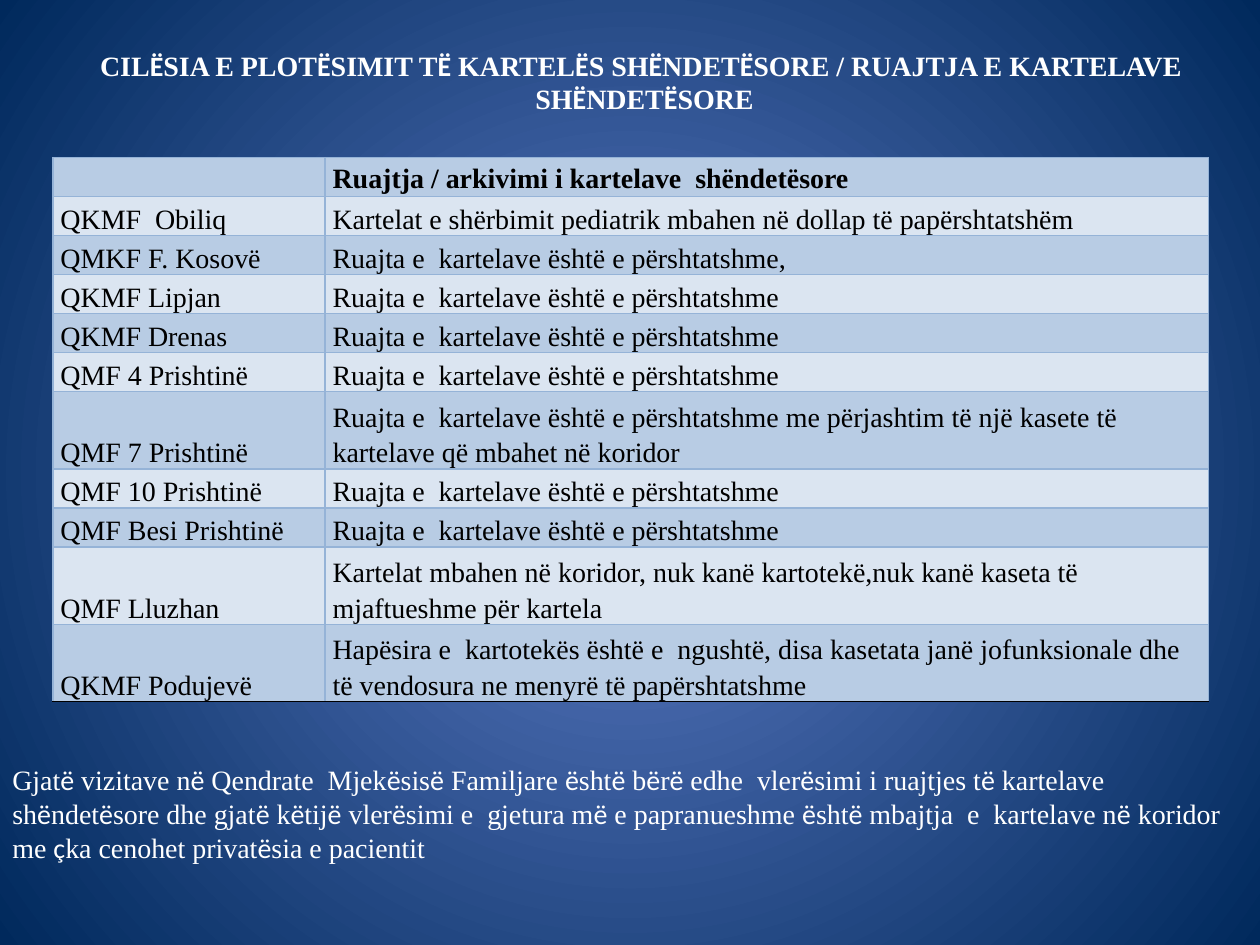
import itertools

import pptx
import pptx.dml.color
import pptx.enum.text
import pptx.oxml
import pptx.oxml.ns
import pptx.util

Inches = pptx.util.Inches
ANCHOR = pptx.enum.text.MSO_ANCHOR
ALIGN = pptx.enum.text.PP_ALIGN

TITLE = ("CILËSIA E PLOTËSIMIT TË KARTELËS SHËNDETËSORE / "
         "RUAJTJA E KARTELAVE  SHËNDETËSORE")
NOTE = ("Gjatë vizitave në Qendrate  Mjekësisë Familjare është bërë edhe  "
        "vlerësimi i ruajtjes të kartelave  shëndetësore dhe gjatë këtijë "
        "vlerësimi e  gjetura më e papranueshme është mbajtja  e  kartelave "
        "në koridor me çka cenohet privatësia e pacientit")
SUITABLE = "Ruajta e  kartelave është e përshtatshme"
ROWS = [
    ("", "Ruajtja / arkivimi i kartelave  shëndetësore"),
    ("QKMF  Obiliq", "Kartelat e shërbimit pediatrik mbahen në dollap të papërshtatshëm"),
    ("QMKF F. Kosovë", SUITABLE + ","),
    ("QKMF Lipjan", SUITABLE),
    ("QKMF Drenas", SUITABLE),
    ("QMF 4 Prishtinë", SUITABLE),
    ("QMF 7 Prishtinë", SUITABLE + " me përjashtim të një kasete të kartelave që mbahet në koridor"),
    ("QMF 10 Prishtinë", SUITABLE),
    ("QMF Besi Prishtinë", SUITABLE),
    ("QMF Lluzhan", "Kartelat mbahen në koridor, nuk kanë kartotekë,"
                    "nuk kanë kaseta të mjaftueshme për kartela"),
    ("QKMF Podujevë", "Hapësira e  kartotekës është e  ngushtë, disa kasetata janë "
                      "jofunksionale dhe të vendosura ne menyrë të papërshtatshme"),
]
COLUMN_WIDTHS = (2.16, 7.01)
LINE_LIMIT = 70  # longer cell text takes two lines
ROW_HEIGHT, TALL_ROW_HEIGHT = 0.31, 0.61
BAND_FILLS = ("B8CCE4", "DBE5F1")
BORDER, LAST_BORDER = "95B3D7", "000000"
GLOW, NIGHT = "5E7CC5", "00295C"
SERIF, SANS = "Times New Roman", "Calibri"
ACCENTED = "Ëëç"  # set in the sans font outside the table


def rgb(value):
    return pptx.dml.color.RGBColor.from_string(value)


def apply(target, **values):
    for name, value in values.items():
        setattr(target, name, value)


def add_span(para, text, font, color, bold=False):
    span = para.add_run()
    span.text = text
    apply(span.font, name=font, size=pptx.util.Pt(16), bold=bold)
    span.font.color.rgb = rgb(color)


def write_mixed(box, text, align, bold):
    """Fill a box with white text that switches font at accented letters."""
    apply(box.text_frame, word_wrap=True, vertical_anchor=ANCHOR.MIDDLE,
          auto_size=pptx.enum.text.MSO_AUTO_SIZE.SHAPE_TO_FIT_TEXT)
    para = box.text_frame.paragraphs[0]
    para.alignment = align
    for accented, letters in itertools.groupby(text, lambda letter: letter in ACCENTED):
        add_span(para, "".join(letters), SANS if accented else SERIF, "FFFFFF", bold)


def paint_background(page):
    fill = page.background.fill
    fill.gradient()
    for stop, position, color in zip(fill.gradient_stops, (0, 1), (GLOW, NIGHT)):
        stop.position = position
        stop.color.rgb = rgb(color)
    gradient = page.element.find(".//" + pptx.oxml.ns.qn("a:gradFill"))
    gradient.remove(gradient.find(pptx.oxml.ns.qn("a:lin")))
    gradient.append(pptx.oxml.parse_xml(
        f'<a:path {pptx.oxml.ns.nsdecls("a")} path="circle">'
        '<a:fillToRect l="50000" t="50000" r="50000" b="50000"/></a:path>'))


def border_cell(cell, bottom):
    properties = cell._tc.get_or_add_tcPr()
    for index, (side, color) in enumerate(zip("LRTB", (BORDER,) * 3 + (bottom,))):
        properties.insert(index, pptx.oxml.parse_xml(
            f'<a:ln{side} {pptx.oxml.ns.nsdecls("a")} w="12700"><a:solidFill>'
            f'<a:srgbClr val="{color}"/></a:solidFill></a:ln{side}>'))


def add_records_table(page):
    heights = [TALL_ROW_HEIGHT if len(text) > LINE_LIMIT else ROW_HEIGHT for _, text in ROWS]
    table = page.shapes.add_table(
        len(ROWS), len(COLUMN_WIDTHS), Inches(0.42), Inches(1.25),
        Inches(sum(COLUMN_WIDTHS)), Inches(sum(heights))).table
    apply(table, first_row=False, horz_banding=False)
    for column, width in zip(table.columns, COLUMN_WIDTHS):
        column.width = Inches(width)
    for index, (texts, height) in enumerate(zip(ROWS, heights)):
        table.rows[index].height = Inches(height)
        header, last = index == 0, index == len(ROWS) - 1
        for cell, text in zip(table.rows[index].cells, texts):
            apply(cell, margin_left=Inches(0.06), margin_right=Inches(0.06),
                  margin_top=0, margin_bottom=0,
                  vertical_anchor=ANCHOR.MIDDLE if header else ANCHOR.BOTTOM)
            cell.fill.solid()
            cell.fill.fore_color.rgb = rgb(BAND_FILLS[index % 2])
            border_cell(cell, LAST_BORDER if last else BORDER)
            para = cell.text_frame.paragraphs[0]
            para.line_spacing = 1.15
            if text:
                add_span(para, text, SERIF, "000000", header)
            else:
                para.font.size = pptx.util.Pt(16)


def main():
    deck = pptx.Presentation()
    apply(deck, slide_width=Inches(10), slide_height=Inches(7.5))
    page = deck.slides.add_slide(deck.slide_layouts[5])
    paint_background(page)
    title = page.shapes.title
    apply(title, left=0, top=Inches(0.33), width=Inches(10.23), height=Inches(0.64))
    write_mixed(title, TITLE, ALIGN.CENTER, True)
    add_records_table(page)
    note = page.shapes.add_textbox(0, Inches(6), Inches(10), Inches(0.91))
    write_mixed(note, NOTE, ALIGN.LEFT, False)
    deck.save("out.pptx")


if __name__ == "__main__":
    main()
